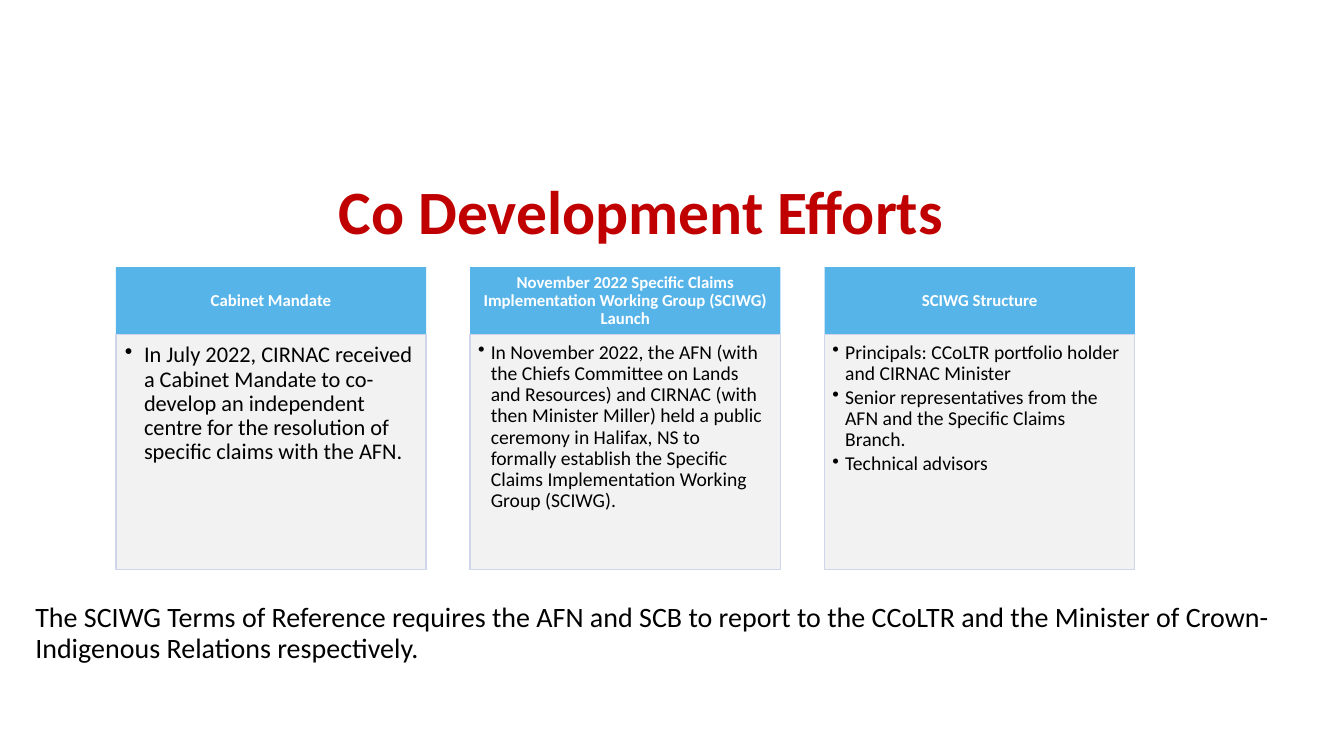
from pptx import Presentation
from pptx.dml.color import RGBColor
from pptx.enum.shapes import MSO_SHAPE
from pptx.enum.text import MSO_ANCHOR, PP_ALIGN
from pptx.oxml.ns import qn
from pptx.util import Cm, Pt

RECT = MSO_SHAPE.RECTANGLE
TOP, MIDDLE = MSO_ANCHOR.TOP, MSO_ANCHOR.MIDDLE
LEFT, CENTER = PP_ALIGN.LEFT, PP_ALIGN.CENTER


def rgb(value):
    return RGBColor.from_string(value)


def write(sp, lines, size, color="000000", bold=False, align=LEFT, anchor=MIDDLE,
          insets=(0.25, 0.13, 0.25, 0.13), after=0, indent=None):
    """Fill a shape with paragraphs; insets and the bullet indent are in cm."""
    tf = sp.text_frame
    tf.word_wrap = True
    tf.vertical_anchor = anchor
    tf.margin_left, tf.margin_top, tf.margin_right, tf.margin_bottom = map(Cm, insets)
    for i, line in enumerate(lines):
        p = tf.add_paragraph() if i else tf.paragraphs[0]
        p.alignment = align
        p.line_spacing = 0.9
        p.space_after = Pt(after)
        if indent:
            pPr = p._p.get_or_add_pPr()
            pPr.set("marL", str(Cm(indent)))
            pPr.set("indent", str(-Cm(indent)))
            bullet = pPr.makeelement(qn("a:buChar"), {"char": "•"})
            pPr.append(bullet)
        r = p.add_run()
        r.text = line
        r.font.name = "Calibri"
        r.font.size = Pt(size)
        r.font.bold = bold
        r.font.color.rgb = rgb(color)


prs = Presentation()
prs.slide_width, prs.slide_height = Cm(33.87), Cm(19.05)
s = prs.slides.add_slide(prs.slide_layouts[6])

title = s.shapes.add_textbox(Cm(-1.19), Cm(4.34), Cm(34.7), Cm(2.13))
write(title, ["Co Development Efforts"], 44, "C00000", bold=True, align=CENTER)

reporting = s.shapes.add_textbox(Cm(0.64), Cm(12.65), Cm(31.65), Cm(5.66))
write(reporting, ["The SCIWG Terms of Reference requires the AFN and SCB to report to the "
                  "CCoLTR and the Minister of Crown-Indigenous Relations respectively."],
      20, after=6, insets=(0.25, 1.12, 0.25, 0.13))

# Heading, bullets, bullet size, bullet indent, body insets
WIDE, NARROW = (0.23, 0.23, 0.3, 0.34), (0.2, 0.2, 0.27, 0.3)
columns = [
    ("Cabinet Mandate",
     ["In July 2022, CIRNAC received a Cabinet Mandate to co-develop an independent "
      "centre for the resolution of specific claims with the AFN."],
     16, 0.48, WIDE),
    ("November 2022 Specific Claims Implementation Working Group (SCIWG) Launch",
     ["In November 2022, the AFN (with the Chiefs Committee on Lands and Resources) "
      "and CIRNAC (with then Minister Miller) held a public ceremony in Halifax, NS to "
      "formally establish the Specific Claims Implementation Working Group (SCIWG)."],
     14, 0.32, NARROW),
    ("SCIWG Structure",
     ["Principals: CCoLTR portfolio holder and CIRNAC Minister",
      "Senior representatives from the AFN and the Specific Claims Branch.",
      "Technical advisors"],
     14, 0.32, NARROW),
]
COL_LEFT, COL_STEP, COL_WIDTH = 2.92, 8.93, 7.82
HEAD_TOP, HEAD_HEIGHT, BODY_HEIGHT = 6.73, 1.7, 5.92

for i, (heading, bullets, size, indent, insets) in enumerate(columns):
    x = Cm(COL_LEFT + i * COL_STEP)

    head = s.shapes.add_shape(RECT, x, Cm(HEAD_TOP), Cm(COL_WIDTH), Cm(HEAD_HEIGHT))
    head.shadow.inherit = False
    head.fill.solid()
    head.fill.fore_color.rgb = rgb("56B4E9")
    head.line.fill.background()
    write(head, [heading], 12, "FFFFFF", bold=True, align=CENTER)

    body = s.shapes.add_shape(RECT, x, Cm(HEAD_TOP + HEAD_HEIGHT), Cm(COL_WIDTH), Cm(BODY_HEIGHT))
    body.shadow.inherit = False
    body.fill.solid()
    body.fill.fore_color.rgb = rgb("F2F2F2")
    body.line.color.rgb = rgb("CFD5EA")
    body.line.width = Pt(1)
    write(body, bullets, size, anchor=TOP, insets=insets, after=2, indent=indent)

prs.save("out.pptx")
